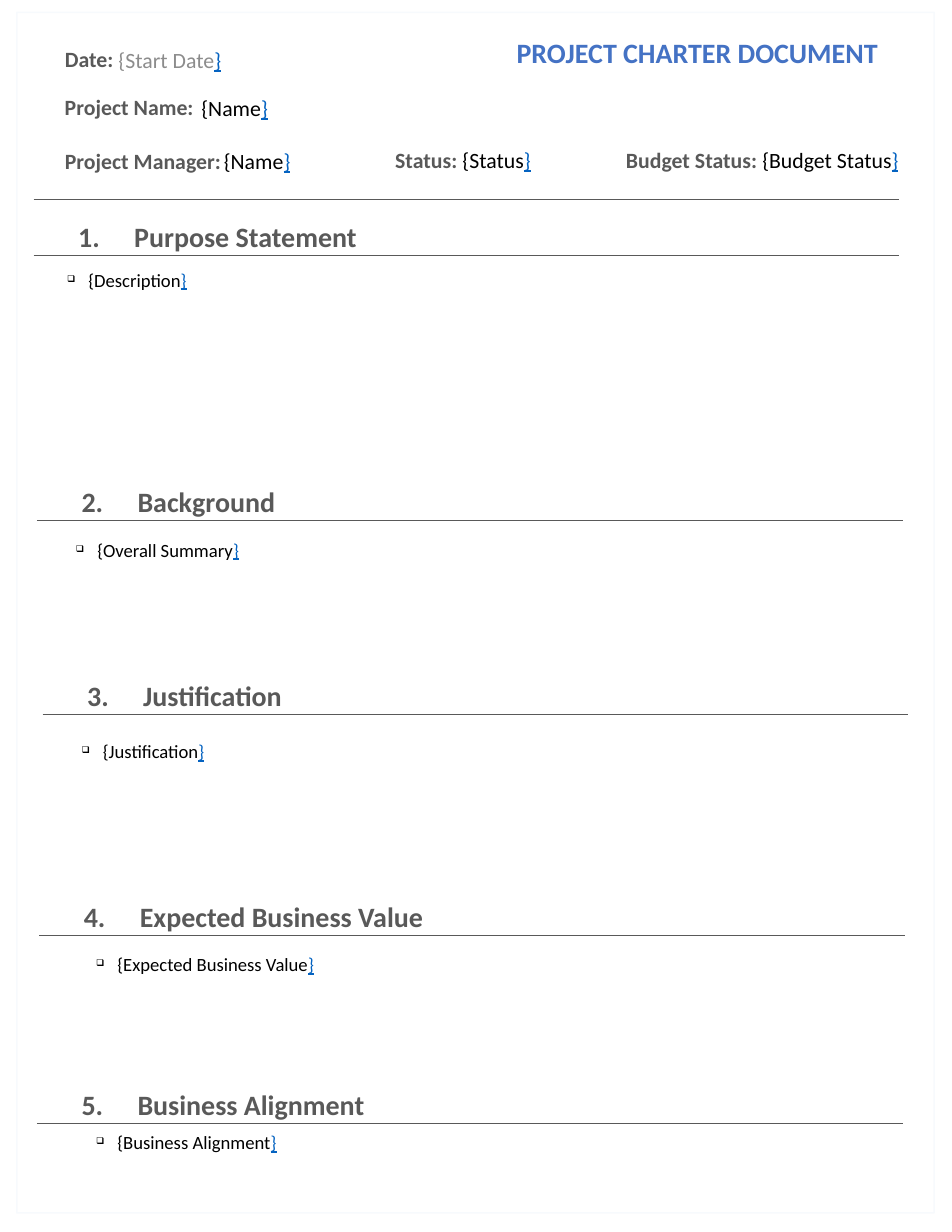
from typing import NamedTuple

from lxml import etree
from pptx import Presentation
from pptx.dml.color import RGBColor
from pptx.enum.shapes import MSO_CONNECTOR, MSO_SHAPE
from pptx.enum.text import MSO_ANCHOR, MSO_AUTO_SIZE, PP_ALIGN
from pptx.oxml.ns import qn
from pptx.util import Inches, Pt

LINE, RECT = MSO_CONNECTOR.STRAIGHT, MSO_SHAPE.RECTANGLE
TOP, MIDDLE = MSO_ANCHOR.TOP, MSO_ANCHOR.MIDDLE
LEFT, CENTER, JUSTIFY = PP_ALIGN.LEFT, PP_ALIGN.CENTER, PP_ALIGN.JUSTIFY
GROW = MSO_AUTO_SIZE.SHAPE_TO_FIT_TEXT

GRAY = RGBColor(0x59, 0x59, 0x59)
PALE = RGBColor(0x8C, 0x8C, 0x8C)
BLACK = RGBColor(0x00, 0x00, 0x00)
BLUE = RGBColor(0x44, 0x72, 0xC4)
LINK = RGBColor(0x05, 0x63, 0xC1)
FRAME = RGBColor(0xB5, 0xD2, 0xEC)
FONT = "Calibri"
RULE = 7.73  # length of every rule


class Box(NamedTuple):
    left: float
    top: float
    width: float
    height: float


class Field(NamedTuple):
    box: Box
    label: str = ""
    value: str = ""
    color: RGBColor = BLACK
    anchor: MSO_ANCHOR = TOP
    wrap: bool = True


class Section(NamedTuple):
    title: str
    left: float
    rule: float
    width: float
    value: str
    body: Box
    align: PP_ALIGN


FIELDS = [
    Field(Box(0.48, 0.36, 0.91, 0.34), label="Date:"),
    Field(Box(0.96, 0.24, 1.27, 0.59), value="Start Date", color=PALE, anchor=MIDDLE),
    Field(Box(0.48, 0.79, 1.8, 0.34), label="Project Name:"),
    Field(Box(1.7, 0.75, 3.27, 0.43), value="Name", anchor=MIDDLE),
    Field(Box(0.48, 1.27, 1.61, 0.34), label="Project Manager:", wrap=False),
    Field(Box(1.9, 1.22, 3.27, 0.44), value="Name", anchor=MIDDLE),
    Field(Box(3.43, 1.26, 1.42, 0.34), "Status: ", "Status", wrap=False),
    Field(Box(5.49, 1.26, 2.66, 0.34), "Budget Status: ", "Budget Status", wrap=False),
]

SECTIONS = [
    Section("Purpose Statement", 0.3, 2.28, 3.21,
            "Description", Box(0.5, 2.35, 7.61, 1.89), JUSTIFY),
    Section("Background", 0.33, 4.65, 2.45,
            "Overall Summary", Box(0.58, 4.76, 7.61, 0.99), JUSTIFY),
    Section("Justification", 0.38, 6.38, 2.46,
            "Justification", Box(0.63, 6.56, 7.41, 0.3), LEFT),
    Section("Expected Business Value", 0.35, 8.35, 3.76,
            "Expected Business Value", Box(0.76, 8.46, 7.36, 1.2), JUSTIFY),
    Section("Business Alignment", 0.33, 10.03, 3.31,
            "Business Alignment", Box(0.76, 10.05, 7.33, 0.3), LEFT),
]


def add_text(shapes, box: Box, size: float, anchor=TOP, wrap=True, align=LEFT):
    """Add an empty text box and return its paragraph."""
    frame = shapes.add_textbox(*map(Inches, box)).text_frame
    frame.word_wrap = wrap
    if not wrap:
        frame.auto_size = GROW
    frame.vertical_anchor = anchor
    para = frame.paragraphs[0]
    para.alignment = align
    para.font.name, para.font.size = FONT, Pt(size)
    return para


def add_run(para, text: str, color: RGBColor, bold=False, under=False) -> None:
    run = para.add_run()
    run.text = text
    run.font.name, run.font.size = FONT, para.font.size
    run.font.bold, run.font.underline = bold, under
    run.font.color.rgb = color


def add_value(para, name: str, color: RGBColor = BLACK) -> None:
    """Write {name} with its closing brace marked as a link."""
    add_run(para, "{" + name, color)
    add_run(para, "}", LINK, under=True)


def add_bullet(para) -> None:
    props = para._p.get_or_add_pPr()
    props.set("marL", str(Inches(0.19)))
    props.set("indent", str(-Inches(0.19)))
    size = etree.Element(qn("a:buSzPct"), val="50000")
    mark = etree.Element(qn("a:buChar"), char="❑")
    props.insert(0, size)
    props.insert(1, mark)


def add_rule(shapes, left: float, top: float) -> None:
    ends = map(Inches, (left, top, left + RULE, top))
    rule = shapes.add_connector(LINE, *ends)
    rule.line.color.rgb, rule.line.width = GRAY, Pt(0.5)
    etree.SubElement(rule._element.spPr, qn("a:effectLst"))


def add_field(shapes, field: Field) -> None:
    para = add_text(shapes, field.box, 14, field.anchor, field.wrap)
    if field.label:
        add_run(para, field.label, GRAY, bold=True)
    if field.value:
        add_value(para, field.value, field.color)


def add_section(shapes, number: int, part: Section) -> None:
    # Heading and its rule
    group = shapes.add_group_shape().shapes
    head = Box(part.left + 0.3, part.rule - 0.37, part.width, 0.4)
    para = add_text(group, head, 18, wrap=False)
    add_run(para, f"{number}.\t{part.title}", GRAY, bold=True)
    add_rule(group, part.left, part.rule)
    # Bulleted body
    para = add_text(shapes, part.body, 12, align=part.align)
    add_bullet(para)
    add_value(para, part.value)


def add_frame(shapes) -> None:
    frame = shapes.add_shape(RECT, *map(Inches, (0.15, 0.11, 8.19, 10.72)))
    frame.shadow.inherit = False
    frame.fill.background()
    frame.line.color.rgb, frame.line.width = FRAME, Pt(1)
    tint = frame.line._ln.find(".//" + qn("a:srgbClr"))
    etree.SubElement(tint, qn("a:alpha"), val="10000")


def main() -> None:
    deck = Presentation()
    deck.slide_width, deck.slide_height = Inches(8.5), Inches(11)
    shapes = deck.slides.add_slide(deck.slide_layouts[6]).shapes

    # Title and project details
    title = add_text(shapes, Box(4.3, 0.27, 3.85, 0.39), 18, MIDDLE, align=CENTER)
    add_run(title, "PROJECT CHARTER DOCUMENT", BLUE, bold=True)
    for field in FIELDS:
        add_field(shapes, field)
    add_rule(shapes, 0.3, 1.78)

    # Numbered sections
    for number, part in enumerate(SECTIONS, 1):
        add_section(shapes, number, part)

    # Page border
    add_frame(shapes)
    deck.save("out.pptx")


if __name__ == "__main__":
    main()
